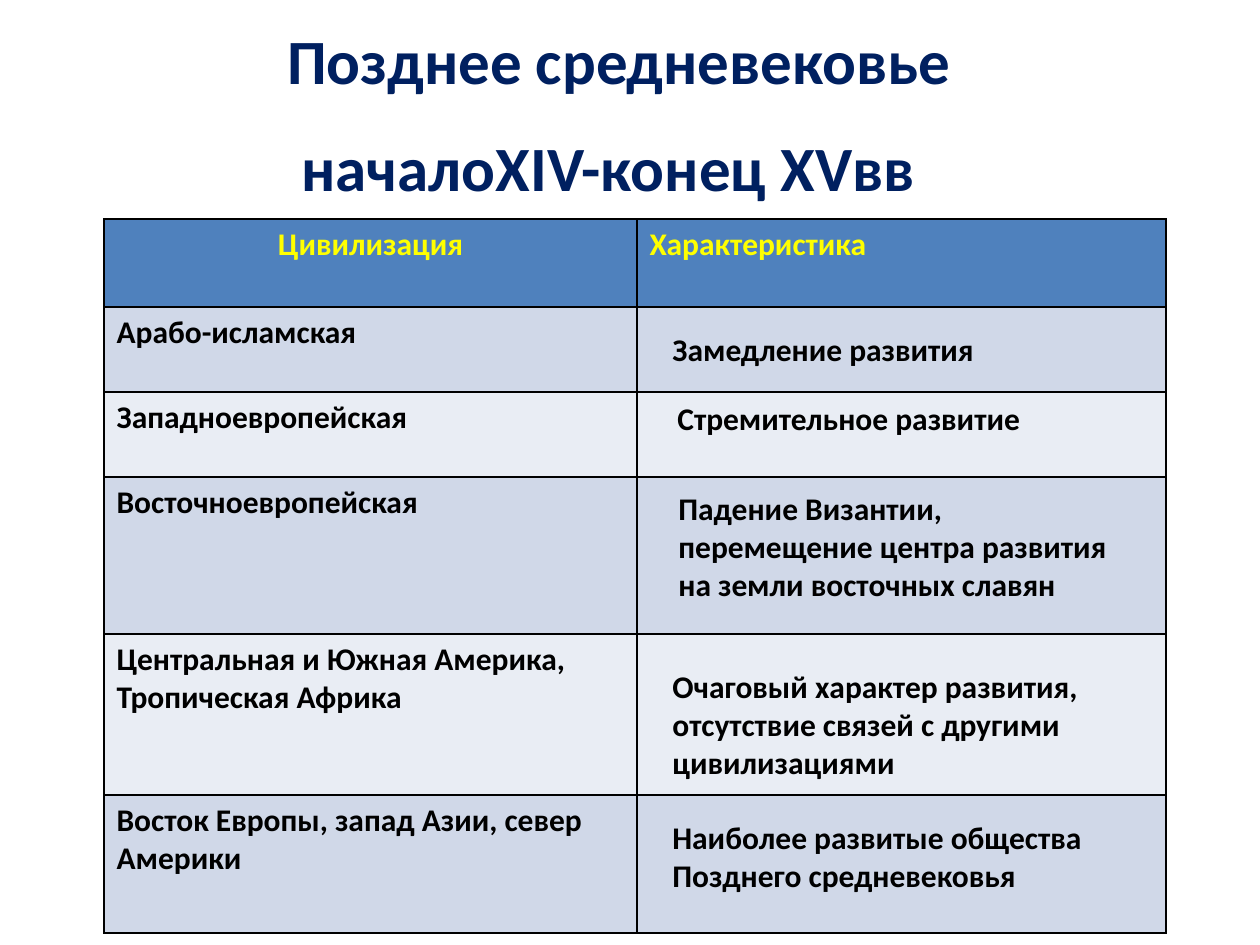
import pptx
import pptx.dml.color
import pptx.enum.text
import pptx.oxml
import pptx.oxml.ns
import pptx.util

EMU_PER_PX = 914400 / 126
COLORS = {
    "title": "002060",
    "header_fill": "4F81BD",
    "header_text": "FFFF00",
    "odd_row": "D0D8E8",
    "even_row": "E9EDF4",
    "text": "000000",
    "border": "000000",
}
CENTER = pptx.enum.text.PP_ALIGN.CENTER
LEFT = pptx.enum.text.PP_ALIGN.LEFT

TITLE_BOX = (123, 15, 992, 204)
TABLE_ORIGIN = (104, 219)
COLUMN_WIDTHS = (533, 529)
ROW_HEIGHTS = (88, 85, 85, 157, 161, 138)
HEADERS = (("Цивилизация", CENTER), ("Характеристика", LEFT))
CIVILIZATIONS = (
    "Арабо-исламская",
    "Западноевропейская",
    "Восточноевропейская",
    "Центральная и Южная Америка, Тропическая Африка",
    "Восток Европы, запад Азии, север Америки",
)
# Text and box (left, top, width, height) relative to the table's corner
TRAITS = (
    ("Замедление развития", (556, 105, 357, 50)),
    ("Стремительное развитие", (561, 174, 451, 50)),
    ("Падение Византии, перемещение центра развития на земли восточных славян",
     (562, 264, 469, 127)),
    ("Очаговый характер развития, отсутствие связей с другими цивилизациями",
     (556, 442, 474, 127)),
    ("Наиболее развитые общества Позднего средневековья", (556, 593, 476, 89)),
)


def px(length):
    return pptx.util.Emu(round(length * EMU_PER_PX))


def rgb(name):
    return pptx.dml.color.RGBColor.from_string(COLORS[name])


def add_span(para, text, size, color):
    span = para.add_run()
    span.text = text
    font_format = {"name": "Calibri", "size": pptx.util.Pt(size), "bold": True}
    for attribute, value in font_format.items():
        setattr(span.font, attribute, value)
    span.font.color.rgb = rgb(color)


def add_text_box(page, area):
    box = page.shapes.add_textbox(*map(px, area))
    box.text_frame.word_wrap = True
    return box.text_frame


def add_title(page, area):
    frame = add_text_box(page, area)
    first, second = frame.paragraphs[0], frame.add_paragraph()
    for para, text in ((first, "Позднее средневековье"), (second, "началоXIV-конец XVвв")):
        para.alignment = CENTER
        add_span(para, text, 36, "title")
    add_span(second, " ", 54, "title")


def set_borders(cell):
    properties = cell._tc.get_or_add_tcPr()
    for position, side in enumerate(("lnL", "lnR", "lnT", "lnB")):
        line = pptx.oxml.parse_xml(
            f'<a:{side} {pptx.oxml.ns.nsdecls("a")} w="12700"><a:solidFill>'
            f'<a:srgbClr val="{COLORS["border"]}"/></a:solidFill></a:{side}>'
        )
        properties.insert(position, line)


def add_table(page, origin):
    size = (sum(COLUMN_WIDTHS), sum(ROW_HEIGHTS))
    table = page.shapes.add_table(
        len(ROW_HEIGHTS), len(COLUMN_WIDTHS), *map(px, origin + size)
    ).table
    for column, width in zip(table.columns, COLUMN_WIDTHS):
        column.width = px(width)
    for index, (row, height) in enumerate(zip(table.rows, ROW_HEIGHTS)):
        row.height = px(height)
        fill = ("odd_row" if index % 2 else "even_row") if index else "header_fill"
        for cell in row.cells:
            cell.fill.solid()
            cell.fill.fore_color.rgb = rgb(fill)
            set_borders(cell)
    for column, (text, alignment) in enumerate(HEADERS):
        para = table.cell(0, column).text_frame.paragraphs[0]
        para.alignment = alignment
        add_span(para, text, 18, "header_text")
    for row, text in enumerate(CIVILIZATIONS, start=1):
        add_span(table.cell(row, 0).text_frame.paragraphs[0], text, 18, "text")


def add_traits(page, origin):
    """Lay the descriptions over the right column of the table."""
    for text, (left, top, width, height) in TRAITS:
        frame = add_text_box(page, (origin[0] + left, origin[1] + top, width, height))
        add_span(frame.paragraphs[0], text, 18, "text")


def main():
    deck = pptx.Presentation()
    deck.slide_width, deck.slide_height = px(1260), px(945)
    page = deck.slides.add_slide(deck.slide_layouts[6])
    add_title(page, TITLE_BOX)
    add_table(page, TABLE_ORIGIN)
    add_traits(page, TABLE_ORIGIN)
    deck.save("out.pptx")


if __name__ == "__main__":
    main()
